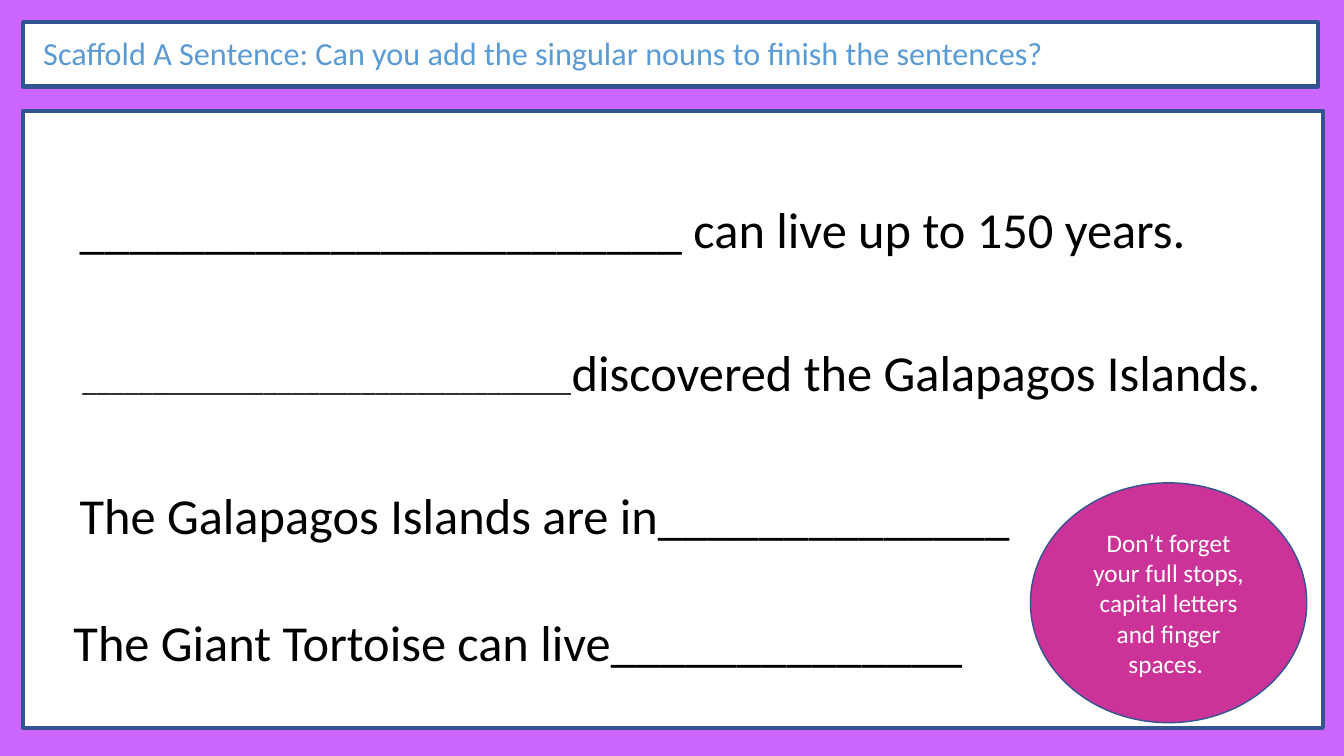
from dataclasses import dataclass

import pptx
import pptx.dml.color
import pptx.enum.shapes
import pptx.enum.text
import pptx.util

SHAPE = pptx.enum.shapes.MSO_SHAPE
ALIGN = pptx.enum.text.PP_ALIGN
ANCHOR = pptx.enum.text.MSO_ANCHOR


@dataclass(frozen=True)
class Theme:
    font: str = "Calibri"
    backdrop: str = "CC66FF"
    paper: str = "FFFFFF"
    border: str = "325491"
    reminder: str = "CC3399"
    heading: str = "5B9BD5"
    ink: str = "000000"
    heading_size: int = 23
    sentence_size: int = 36
    small_blank_size: int = 20
    reminder_size: int = 18


@dataclass(frozen=True)
class Area:
    """Place and size in percent of the slide's width and height."""
    left: float
    top: float
    width: float
    height: float


@dataclass(frozen=True)
class Panel:
    area: Area
    fill: str
    border_width: float = 0
    outline: SHAPE = SHAPE.RECTANGLE


@dataclass(frozen=True)
class Piece:
    text: str
    size: int
    color: str


@dataclass(frozen=True)
class Sentence:
    left: float
    top: float
    pieces: tuple[Piece, ...]


THEME = Theme()
WIDTH, HEIGHT = pptx.util.Inches(13.33), pptx.util.Inches(7.5)
SENTENCE_WIDTH, SENTENCE_HEIGHT = 89.27, 9.47


def rgb(code: str) -> pptx.dml.color.RGBColor:
    return pptx.dml.color.RGBColor.from_string(code)


def place(area: Area) -> tuple[int, int, int, int]:
    return (round(WIDTH * area.left / 100), round(HEIGHT * area.top / 100),
            round(WIDTH * area.width / 100), round(HEIGHT * area.height / 100))


def draw_panel(slide, panel: Panel):
    shape = slide.shapes.add_shape(panel.outline, *place(panel.area))
    shape.shadow.inherit = False
    shape.fill.solid()
    shape.fill.fore_color.rgb = rgb(panel.fill)
    if panel.border_width:
        shape.line.color.rgb = rgb(THEME.border)
        shape.line.width = pptx.util.Pt(panel.border_width)
    else:
        shape.line.fill.background()
    return shape


def write(shape, pieces: tuple[Piece, ...], align: ALIGN = ALIGN.LEFT,
          anchor: ANCHOR = ANCHOR.TOP) -> None:
    frame = shape.text_frame
    frame.word_wrap = True
    frame.vertical_anchor = anchor
    paragraph = frame.paragraphs[0]
    paragraph.alignment = align
    for piece in pieces:
        run = paragraph.add_run()
        run.text = piece.text
        look = {"name": THEME.font, "size": pptx.util.Pt(piece.size)}
        for attribute, value in look.items():
            setattr(run.font, attribute, value)
        run.font.color.rgb = rgb(piece.color)


def draw_sentence(slide, sentence: Sentence) -> None:
    area = Area(sentence.left, sentence.top, SENTENCE_WIDTH, SENTENCE_HEIGHT)
    write(slide.shapes.add_textbox(*place(area)), sentence.pieces)


def words(text: str) -> Piece:
    return Piece(text, THEME.sentence_size, THEME.ink)


# Content
HEADING_FRAME = Panel(Area(1.73, 2.93, 96.32, 8.53), THEME.paper, 3)
HEADING = Panel(Area(2.48, 3.73, 93.85, 6.53), THEME.paper)
WORKSHEET = Panel(Area(1.73, 14.67, 96.7, 81.6), THEME.paper, 3)
REMINDER = Panel(Area(76.67, 63.87, 20.56, 31.73), THEME.reminder, 1, SHAPE.OVAL)

SMALL_BLANK = Piece("_" * 35, THEME.small_blank_size, THEME.ink)
SENTENCES = (
    Sentence(5.18, 25.6, (words("_" * 24 + " can live up to 150 years."),)),
    Sentence(5.4, 44.53, (SMALL_BLANK, words("discovered the Galapagos Islands."))),
    Sentence(5.18, 63.33, (words("The Galapagos Islands are in" + "_" * 14),)),
    Sentence(4.73, 80.13, (words("The Giant Tortoise can live" + "_" * 14),)),
)


def main() -> None:
    deck = pptx.Presentation()
    deck.slide_width, deck.slide_height = WIDTH, HEIGHT
    slide = deck.slides.add_slide(deck.slide_layouts[6])
    slide.background.fill.solid()
    slide.background.fill.fore_color.rgb = rgb(THEME.backdrop)

    # Heading
    draw_panel(slide, HEADING_FRAME)
    write(draw_panel(slide, HEADING), (Piece(
        "Scaffold A Sentence: Can you add the singular nouns to finish the sentences?",
        THEME.heading_size, THEME.heading),))

    # Sentences to finish
    draw_panel(slide, WORKSHEET)
    for sentence in SENTENCES:
        draw_sentence(slide, sentence)

    # Reminder
    write(draw_panel(slide, REMINDER), (Piece(
        "Don’t forget your full stops, capital letters and finger spaces. ",
        THEME.reminder_size, THEME.paper),), ALIGN.CENTER, ANCHOR.MIDDLE)

    deck.save("out.pptx")


if __name__ == "__main__":
    main()
